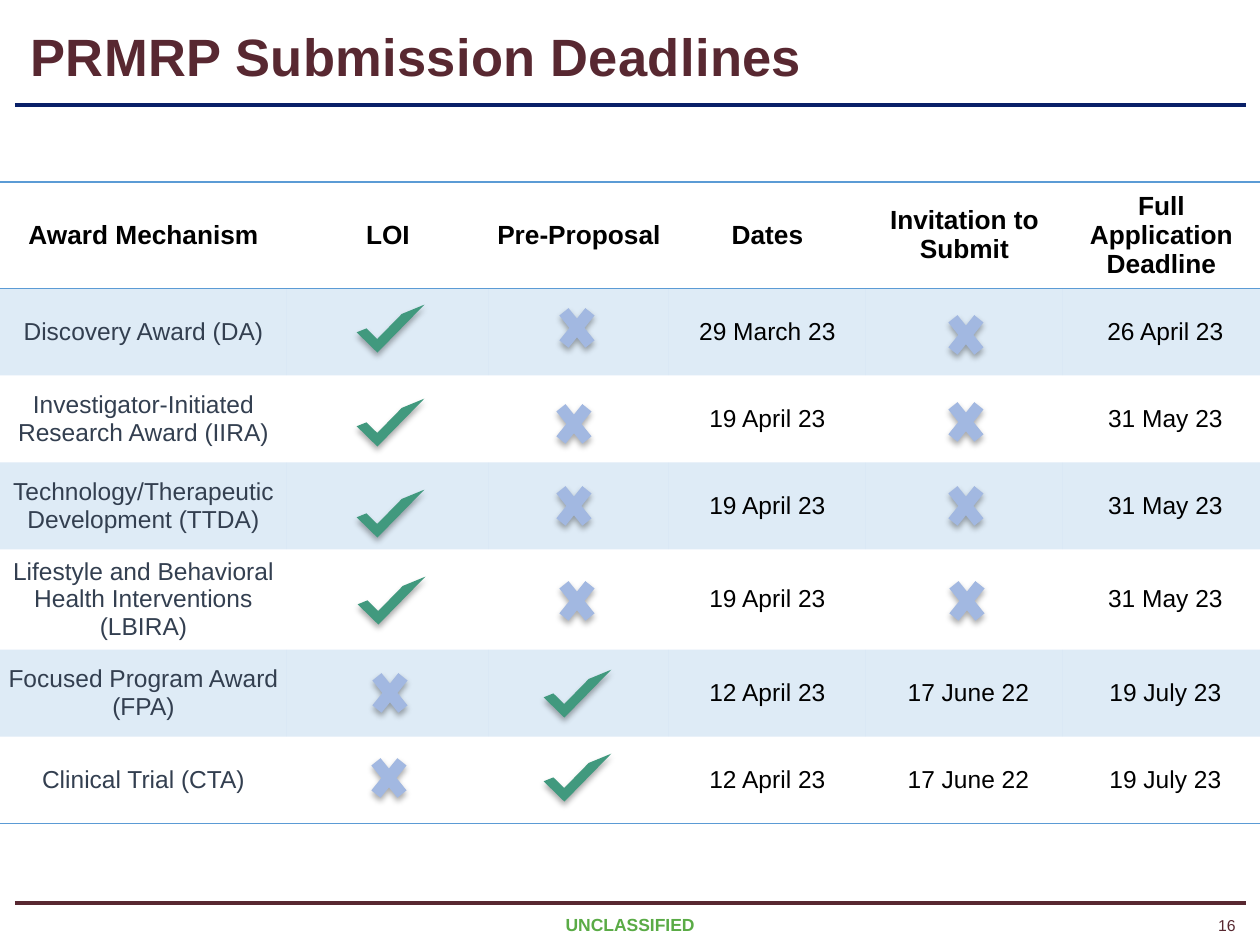
from dataclasses import dataclass

from lxml.etree import SubElement
from pptx import Presentation
from pptx.dml.color import RGBColor
from pptx.enum.shapes import MSO_CONNECTOR, MSO_SHAPE
from pptx.enum.text import MSO_ANCHOR, MSO_AUTO_SIZE, PP_ALIGN
from pptx.oxml import parse_xml
from pptx.oxml.ns import nsdecls, qn
from pptx.util import Emu, Pt

PX_PER_INCH = 126
NO_TABLE_STYLE = "{2D5ABB26-0587-4C30-8999-92F81FD0307C}"


@dataclass(frozen=True)
class Theme:
    font: str = "Arial"
    maroon: str = "582831"
    navy: str = "092068"
    green: str = "5AAB46"
    slate: str = "333F50"
    black: str = "000000"
    band: str = "5B9BD5"
    check: str = "41997E"
    cross: str = "A2B8E1"
    title_pt: int = 30
    header_pt: int = 15
    cell_pt: int = 14
    footer_pt: int = 10
    number_pt: int = 9


def px(n):
    return Emu(round(n * 914400 / PX_PER_INCH))


def set_all(obj, values):
    for name, value in values.items():
        setattr(obj, name, value)


class SlideBuilder:
    def __init__(self, slide, theme):
        self.s = slide
        self.t = theme

    def text(self, tf, words, size, color, align, bold=False):
        p = tf.paragraphs[0]
        p.alignment = align
        r = p.add_run()
        r.text = words
        set_all(r.font, {"name": self.t.font, "size": Pt(size), "bold": bold})
        r.font.color.rgb = RGBColor.from_string(color)
        return p, r

    def title(self, words, box):
        sp = self.s.shapes.title
        set_all(sp, dict(zip(("left", "top", "width", "height"), map(px, box))))
        tf = sp.text_frame
        set_all(tf, {"word_wrap": True, "auto_size": MSO_AUTO_SIZE.NONE,
                     "vertical_anchor": MSO_ANCHOR.MIDDLE})
        p, r = self.text(tf, words, self.t.title_pt, self.t.maroon, PP_ALIGN.LEFT, True)
        p.line_spacing = 0.8
        r._r.get_or_add_rPr().set("spc", "20")

    def label(self, words, box, size, color, align, bold=False):
        tf = self.s.shapes.add_textbox(*map(px, box)).text_frame
        tf.word_wrap = True
        self.text(tf, words, size, color, align, bold)

    def rule(self, y, color):
        ends = map(px, (15, y, 1246, y))
        c = self.s.shapes.add_connector(MSO_CONNECTOR.STRAIGHT, *ends)
        c.line.width = Pt(2.25)
        c.line.color.rgb = RGBColor.from_string(color)
        SubElement(c._element.spPr, qn("a:effectLst"))

    def mark(self, preset, box, color):
        sp = self.s.shapes.add_shape(preset, *map(px, box))
        sp.fill.solid()
        sp.fill.fore_color.rgb = RGBColor.from_string(color)
        sp.line.fill.background()
        sp.shadow.inherit = False
        sp._element.spPr.find(qn("a:effectLst")).append(parse_xml(
            f'<a:outerShdw {nsdecls("a")} blurRad="{Pt(3.5)}" dist="{Pt(2.2)}" '
            f'dir="5400000" rotWithShape="0"><a:srgbClr val="{self.t.black}">'
            '<a:alpha val="32000"/></a:srgbClr></a:outerShdw>'))
        return sp

    def check(self, x, y):
        sp = self.mark(MSO_SHAPE.HALF_FRAME, (x, y, 67, 29), self.t.check)
        sp.rotation = 134.4
        sp._element.spPr.find(qn("a:xfrm")).set("flipH", "1")

    def cross(self, x, y):
        self.mark(MSO_SHAPE.MATH_MULTIPLY, (x, y, 50, 62), self.t.cross)

    def border(self, cell, side):
        cell._tc.get_or_add_tcPr().insert(0, parse_xml(
            f'<a:ln{side} {nsdecls("a")} w="{Pt(1)}"><a:solidFill>'
            f'<a:srgbClr val="{self.t.band}"/></a:solidFill></a:ln{side}>'))

    def shade(self, cell, banded):
        if not banded:
            cell.fill.background()
            return
        cell.fill.solid()
        cell.fill.fore_color.rgb = RGBColor.from_string(self.t.band)
        color = cell._tc.tcPr.find(".//" + qn("a:srgbClr"))
        SubElement(color, qn("a:alpha")).set("val", "20000")

    def table(self, rows, widths, top, row_height):
        frame = self.s.shapes.add_table(
            len(rows), len(widths), 0, px(top), px(sum(widths)), px(row_height * len(rows)))
        tbl = frame.table
        tbl._tbl.tblPr.find(qn("a:tableStyleId")).text = NO_TABLE_STYLE
        for col, width in zip(tbl.columns, widths):
            col.width = px(width)
        margins = dict.fromkeys(
            ("margin_left", "margin_right", "margin_top", "margin_bottom"), px(6))
        for i, row in enumerate(rows):
            for j, words in enumerate(row):
                cell = tbl.cell(i, j)
                set_all(cell, {"vertical_anchor": MSO_ANCHOR.MIDDLE, **margins})
                self.shade(cell, i % 2 == 1)
                if i in (0, len(rows) - 1):
                    self.border(cell, "B")
                if i == 0:
                    self.border(cell, "T")
                if not words:
                    continue
                size = self.t.cell_pt if i else self.t.header_pt
                color = self.t.slate if i and j == 0 else self.t.black
                p, _ = self.text(cell.text_frame, words, size, color, PP_ALIGN.CENTER, i == 0)
                if i and j > 3:
                    p._p.get_or_add_pPr().set("marL", str(px(8)))


ROWS = [
    ("Award Mechanism", "LOI", "Pre-Proposal", "Dates", "Invitation to Submit",
     "Full Application Deadline"),
    ("Discovery Award (DA)", "", "", "29 March 23", "", "26 April 23"),
    ("Investigator-Initiated Research Award (IIRA)", "", "", "19 April 23", "", "31 May 23"),
    ("Technology/Therapeutic Development (TTDA)", "", "", "19 April 23", "", "31 May 23"),
    ("Lifestyle and Behavioral Health Interventions (LBIRA)", "", "", "19 April 23", "",
     "31 May 23"),
    ("Focused Program Award (FPA)", "", "", "12 April 23", "17 June 22", "19 July 23"),
    ("Clinical Trial (CTA)", "", "", "12 April 23", "17 June 22", "19 July 23"),
]
WIDTHS = (287, 202, 180, 197, 197, 197)
CHECKS = [(357, 304), (357, 398), (357, 489), (358, 576), (544, 669), (544, 753)]
CROSSES = [(552, 297), (549, 393), (549, 475), (552, 570), (365, 662), (364, 747),
           (941, 304), (941, 391), (941, 475), (942, 570)]


def main():
    prs = Presentation()
    set_all(prs, {"slide_width": px(1260), "slide_height": px(945)})
    t = Theme()
    b = SlideBuilder(prs.slides.add_slide(prs.slide_layouts[5]), t)
    b.label("UNCLASSIFIED", (546, 908, 168, 34), t.footer_pt, t.green, PP_ALIGN.CENTER, True)
    b.label("16", (1184, 910, 64, 32), t.number_pt, t.maroon, PP_ALIGN.RIGHT)
    b.rule(105, t.navy)
    b.rule(903, t.maroon)
    b.title("PRMRP Submission Deadlines", (18, 0, 1242, 122))
    b.table(ROWS, WIDTHS, top=182, row_height=87)
    for x, y in CHECKS:
        b.check(x, y)
    for x, y in CROSSES:
        b.cross(x, y)
    prs.save("out.pptx")


if __name__ == "__main__":
    main()
